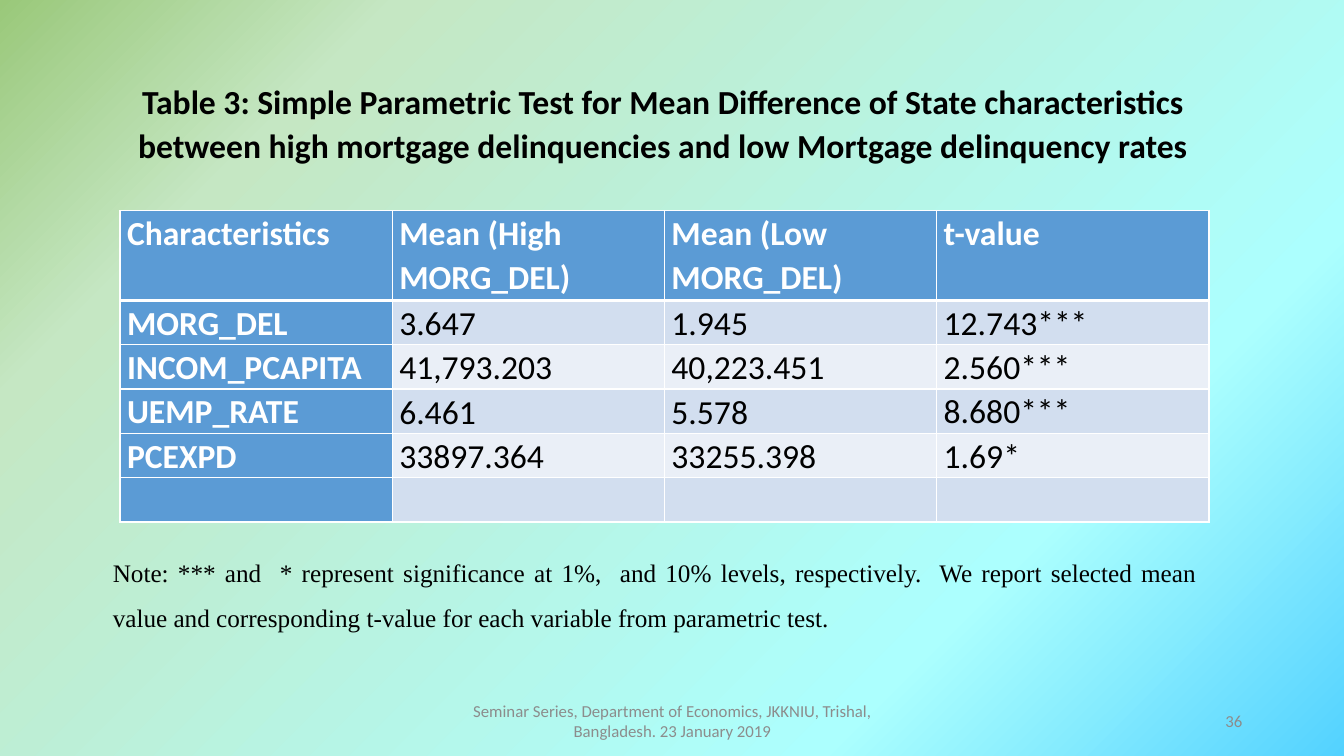
from lxml import etree
from pptx import Presentation
from pptx.dml.color import RGBColor
from pptx.enum.text import MSO_ANCHOR as Anchor, PP_ALIGN as Align
from pptx.oxml import parse_xml
from pptx.oxml.ns import nsdecls, qn
from pptx.util import Inches, Pt

COLORS = {
    "white": "FFFFFF", "black": "000000", "gray": "8C8C8C",
    "header": "5B9BD5", "band_dark": "D2DEEF", "band_light": "EAEFF7",
}
BACKGROUND = [(0, "53D2FF"), (25, "ACFFFE"), (81, "C5E7C3"), (100, "9AC87A")]
ROWS = [
    ["Characteristics", "Mean (High MORG_DEL)", "Mean (Low MORG_DEL)", "t-value"],
    ["MORG_DEL", "3.647", "1.945", "12.743***"],
    ["INCOM_PCAPITA", "41,793.203", "40,223.451", "2.560***"],
    ["UEMP_RATE", "6.461", "5.578", "8.680***"],
    ["PCEXPD", "33897.364", "33255.398", "1.69*"],
    ["", "", "", ""],
]


def write(tf, text, size=24, font="Calibri", color="black", bold=False,
          align=Align.LEFT, spacing=None, after=0):
    tf.word_wrap = True
    p = tf.paragraphs[0]
    p.alignment = align
    p.line_spacing = spacing
    p.space_after = Pt(after)
    r = p.add_run()
    r.text = text
    r.font.size, r.font.name, r.font.bold = Pt(size), font, bold
    r.font.color.rgb = RGBColor.from_string(COLORS[color])


def set_borders(cell, widths):
    """Draw white borders; widths are points for left, right, top and bottom."""
    tcPr = cell._tc.get_or_add_tcPr()
    for i, (side, width) in enumerate(zip("LRTB", widths)):
        tcPr.insert(i, parse_xml(
            f'<a:ln{side} {nsdecls("a")} w="{Pt(width)}"><a:solidFill>'
            f'<a:srgbClr val="{COLORS["white"]}"/></a:solidFill></a:ln{side}>'))


prs = Presentation()
prs.slide_width, prs.slide_height = Inches(13.33), Inches(7.5)
s = prs.slides.add_slide(prs.slide_layouts[6])

# Circular gradient centred on the bottom right corner
s.background.fill.gradient()
grad = s._element.find(".//" + qn("a:gradFill"))
grad.clear()
stops = etree.SubElement(grad, qn("a:gsLst"))
for percent, color in BACKGROUND:
    stop = etree.SubElement(stops, qn("a:gs"), pos=str(percent * 1000))
    etree.SubElement(stop, qn("a:srgbClr"), val=color)
circle = etree.SubElement(grad, qn("a:path"), path="circle")
etree.SubElement(circle, qn("a:fillToRect"), l="100000", t="100000")

# Table of means
table = s.shapes.add_table(len(ROWS), len(ROWS[0]), Inches(1.19), Inches(2.09),
                           Inches(10.79), Inches(3.09)).table
for column in table.columns:
    column.width = Inches(2.7)
for i, values in enumerate(ROWS):
    table.rows[i].height = Inches(0.44 if i else 0.89)
    for j, value in enumerate(values):
        cell = table.cell(i, j)
        heading = i == 0 or j == 0
        cell.margin_left = cell.margin_right = Inches(0.07)
        cell.margin_top = cell.margin_bottom = 0
        cell.vertical_anchor = Anchor.BOTTOM if i and j in (1, 2) else Anchor.TOP
        fill = "header" if heading else "band_dark" if i % 2 else "band_light"
        cell.fill.solid()
        cell.fill.fore_color.rgb = RGBColor.from_string(COLORS[fill])
        set_borders(cell, (1, 1, 3 if i == 1 else 1, 3 if i == 0 else 1))
        if value:
            write(cell.text_frame, value, color="white" if heading else "black",
                  bold=heading, spacing=1.07)

# Title, note, footer and slide number
TEXTS = [
    ((1.02, 0.73, 11.11, 0.95), Anchor.TOP,
     "Table 3: Simple Parametric Test for Mean Difference of State characteristics "
     "between high mortgage delinquencies and low Mortgage delinquency rates",
     dict(bold=True, align=Align.CENTER, spacing=1.07, after=8)),
    ((1.02, 5.33, 10.95, 1.01), Anchor.TOP,
     "Note: *** and  * represent significance at 1%,  and 10% levels, respectively.  "
     "We report selected mean value and corresponding t-value for each variable "
     "from parametric test.",
     dict(size=18, font="Times New Roman", align=Align.JUSTIFY, spacing=1.5, after=8)),
    ((4.42, 6.95, 4.5, 0.4), Anchor.MIDDLE,
     "Seminar Series, Department of Economics, JKKNIU, Trishal, "
     "Bangladesh. 23 January 2019",
     dict(size=12, color="gray", align=Align.CENTER)),
    ((9.42, 6.95, 3, 0.4), Anchor.MIDDLE, "36",
     dict(size=12, color="gray", align=Align.RIGHT)),
]
for box, anchor, text, style in TEXTS:
    tf = s.shapes.add_textbox(*map(Inches, box)).text_frame
    tf.vertical_anchor = anchor
    write(tf, text, **style)

prs.save("out.pptx")
